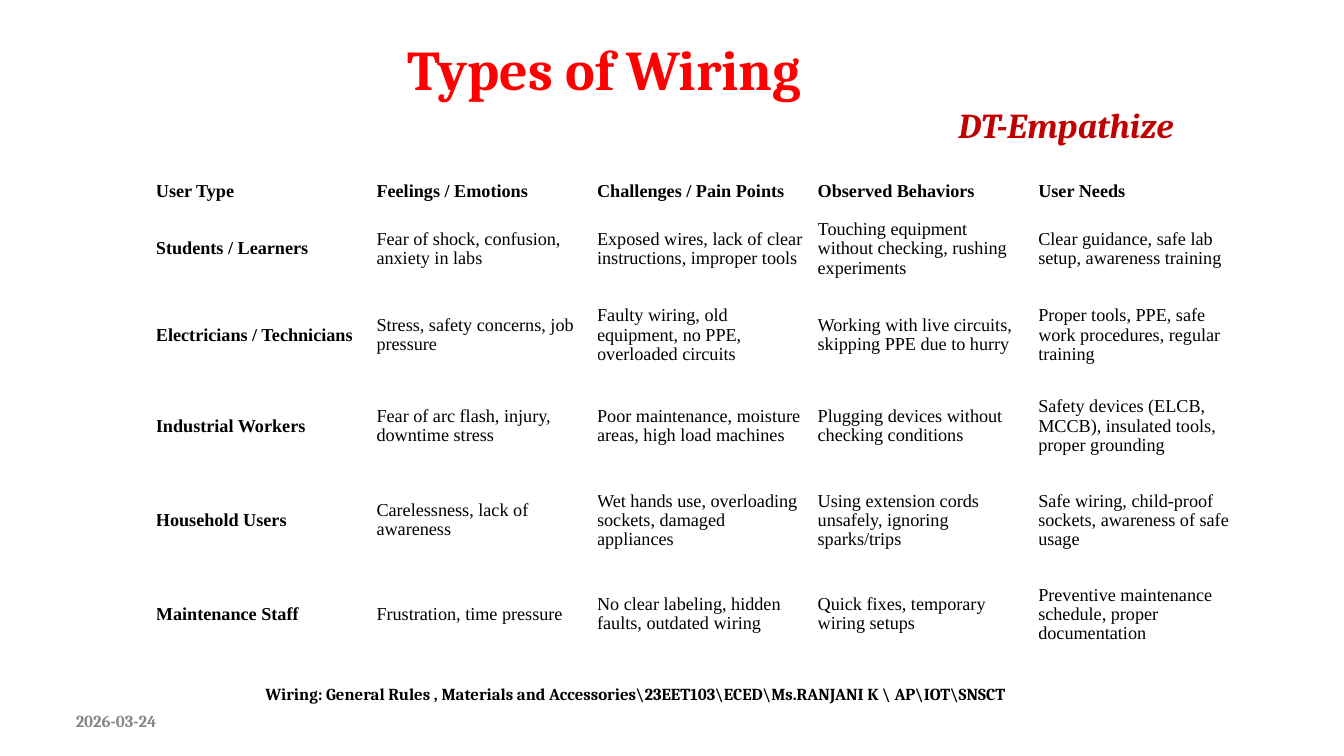
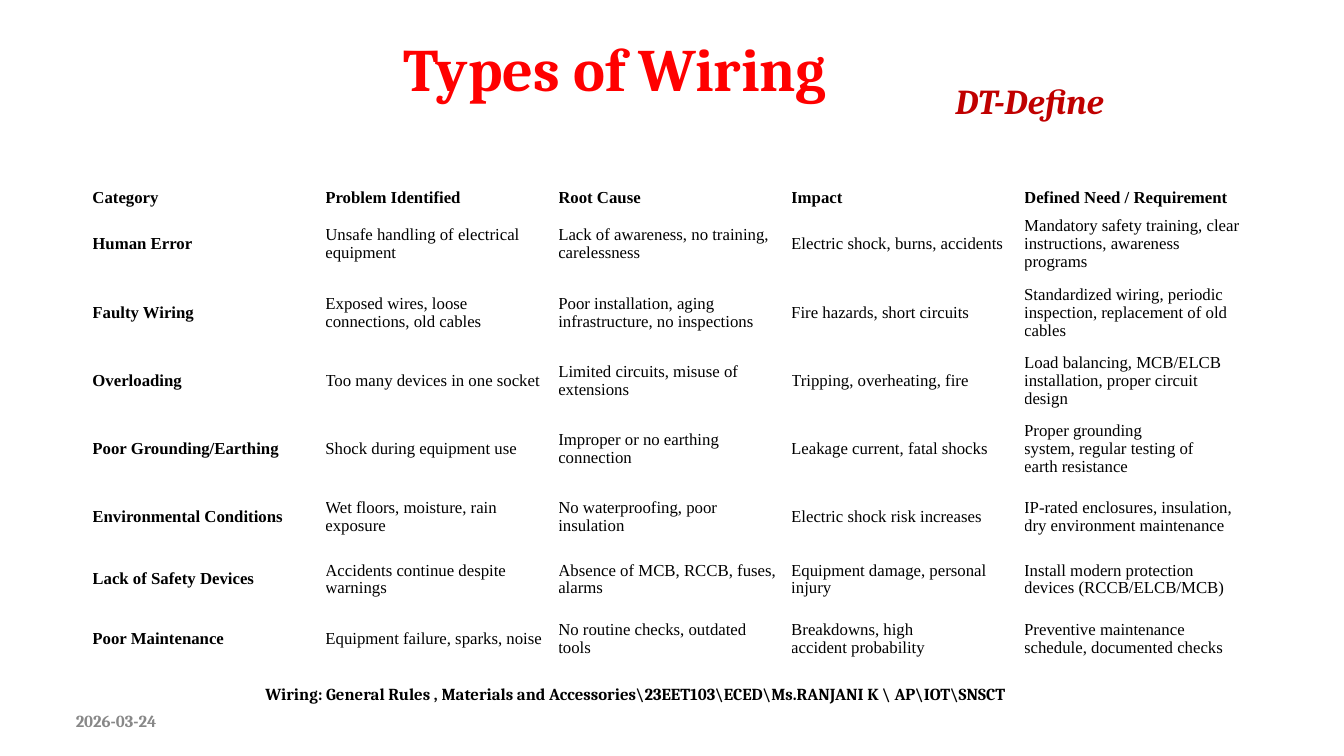
from pptx import Presentation
from pptx.dml.color import RGBColor
from pptx.enum.text import MSO_ANCHOR, MSO_AUTO_SIZE, PP_ALIGN
from pptx.util import Cm, Pt

TOP, MIDDLE = MSO_ANCHOR.TOP, MSO_ANCHOR.MIDDLE
NO_AUTOFIT = MSO_AUTO_SIZE.NONE
LEFT = PP_ALIGN.LEFT

RED = RGBColor(0xFF, 0x00, 0x00)
DARK_RED = RGBColor(0xC0, 0x00, 0x00)
BLACK = RGBColor(0x00, 0x00, 0x00)
GRAY = RGBColor(0x88, 0x88, 0x88)
HEADING_FONT = "Cambria"
TABLE_FONT = "Times New Roman"
TITLE = "Types of Wiring"
FOOTER = (
    "Wiring: General Rules , Materials and Accessories"
    "\\23EET103\\ECED\\Ms.RANJANI K \\ AP\\IOT\\SNSCT"
)
DATE = "2026-03-24"

EMPATHIZE_ROWS = [
    ["User Type", "Feelings / Emotions", "Challenges / Pain Points",
     "Observed Behaviors", "User Needs"],
    ["Students / Learners",
     "Fear of shock, confusion, anxiety in labs",
     "Exposed wires, lack of clear instructions, improper tools",
     "Touching equipment without checking, rushing experiments",
     "Clear guidance, safe lab setup, awareness training"],
    ["Electricians / Technicians",
     "Stress, safety concerns, job pressure",
     "Faulty wiring, old equipment, no PPE, overloaded circuits",
     "Working with live circuits, skipping PPE due to hurry",
     "Proper tools, PPE, safe work procedures, regular training"],
    ["Industrial Workers",
     "Fear of arc flash, injury, downtime stress",
     "Poor maintenance, moisture areas, high load machines",
     "Plugging devices without checking conditions",
     "Safety devices (ELCB, MCCB), insulated tools, proper grounding"],
    ["Household Users",
     "Carelessness, lack of awareness",
     "Wet hands use, overloading sockets, damaged appliances",
     "Using extension cords unsafely, ignoring sparks/trips",
     "Safe wiring, child-proof sockets, awareness of safe usage"],
    ["Maintenance Staff",
     "Frustration, time pressure",
     "No clear labeling, hidden faults, outdated wiring",
     "Quick fixes, temporary wiring setups",
     "Preventive maintenance schedule, proper documentation"],
]

DEFINE_ROWS = [
    ["Category", "Problem Identified", "Root Cause", "Impact",
     "Defined Need / Requirement"],
    ["Human Error",
     "Unsafe handling of electrical equipment",
     "Lack of awareness, no training, carelessness",
     "Electric shock, burns, accidents",
     "Mandatory safety training, clear instructions, awareness programs"],
    ["Faulty Wiring",
     "Exposed wires, loose connections, old cables",
     "Poor installation, aging infrastructure, no inspections",
     "Fire hazards, short circuits",
     "Standardized wiring, periodic inspection, replacement of old cables"],
    ["Overloading",
     "Too many devices in one socket",
     "Limited circuits, misuse of extensions",
     "Tripping, overheating, fire",
     "Load balancing, MCB/ELCB installation, proper circuit design"],
    ["Poor Grounding/Earthing",
     "Shock during equipment use",
     "Improper or no earthing connection",
     "Leakage current, fatal shocks",
     "Proper grounding\vsystem, regular testing of\vearth resistance"],
    ["Environmental Conditions",
     "Wet floors, moisture, rain exposure",
     "No waterproofing, poor insulation",
     "Electric shock risk increases",
     "IP-rated enclosures, insulation, dry environment maintenance"],
    ["Lack of Safety Devices",
     "Accidents continue despite warnings",
     "Absence of MCB, RCCB, fuses, alarms",
     "Equipment damage, personal injury",
     "Install modern protection devices (RCCB/ELCB/MCB)"],
    ["Poor Maintenance",
     "Equipment failure, sparks, noise",
     "No routine checks, outdated tools",
     "Breakdowns, high\vaccident probability",
     "Preventive maintenance schedule, documented checks"],
]


class WiringDeck:
    """Holds the presentation, its style and the current slide."""

    def __init__(self):
        self.presentation = Presentation()
        self.presentation.slide_width = Cm(33.87)
        self.presentation.slide_height = Cm(19.05)
        self.slide = None

    def style_font(self, paragraph, name, size, color, bold=True, italic=False):
        for run in paragraph.runs:
            font = run.font
            font.name, font.size = name, Pt(size)
            font.bold, font.italic = bold, italic
            font.color.rgb = color

    def fill_box(self, shape, text, size, color, italic=False):
        frame = shape.text_frame
        frame.text = text
        frame.word_wrap = True
        frame.auto_size = NO_AUTOFIT
        frame.vertical_anchor = TOP
        frame.margin_left = frame.margin_right = 0
        frame.margin_top = frame.margin_bottom = 0
        paragraph = frame.paragraphs[0]
        paragraph.alignment = LEFT
        self.style_font(paragraph, HEADING_FONT, size, color, italic=italic)

    def add_text(self, text, left, top, width, height, size, color, italic=False):
        shape = self.slide.shapes.add_textbox(
            Cm(left), Cm(top), Cm(width), Cm(height))
        self.fill_box(shape, text, size, color, italic)

    def add_slide(self, left, top, width, height, size):
        layout = self.presentation.slide_layouts[5]
        self.slide = self.presentation.slides.add_slide(layout)
        title = self.slide.shapes.title
        title.left, title.top = Cm(left), Cm(top)
        title.width, title.height = Cm(width), Cm(height)
        self.fill_box(title, TITLE, size, RED)
        self.add_text(FOOTER, 6.69, 17.22, 20, 0.6, 12, BLACK)
        self.add_text(DATE, 1.91, 17.91, 2.4, 0.56, 12, GRAY)

    def add_stage(self, text, left, top, width):
        self.add_text(text, left, top, width, 1.12, 25, DARK_RED, italic=True)

    def add_table(self, rows, left, top, column_width, heights, right_margins, size):
        columns = len(rows[0])
        table = self.slide.shapes.add_table(
            len(rows), columns, Cm(left), Cm(top),
            Cm(column_width * columns), Cm(sum(heights))).table
        table.first_row = table.horz_banding = False
        for column in table.columns:
            column.width = Cm(column_width)
        for row, height in zip(table.rows, heights):
            row.height = Cm(height)
        for row_index, texts in enumerate(rows):
            for column_index, text in enumerate(texts):
                cell = table.cell(row_index, column_index)
                cell.text = text
                cell.fill.background()
                cell.vertical_anchor = MIDDLE
                cell.margin_left = cell.margin_top = cell.margin_bottom = 0
                cell.margin_right = Cm(right_margins[column_index])
                paragraph = cell.text_frame.paragraphs[0]
                paragraph.line_spacing = 0.96
                bold = row_index == 0 or column_index == 0
                self.style_font(paragraph, TABLE_FONT, size, BLACK, bold)


def main():
    deck = WiringDeck()

    deck.add_slide(10.26, 0.88, 10.31, 1.78, 40)
    deck.add_stage("DT-Empathize", 24.15, 2.6, 6)
    deck.add_table(EMPATHIZE_ROWS, 3.93, 4.46, 5.56,
                   [0.76, 2.12, 2.22] + [2.37] * 3,
                   [0.48, 0.48, 0.33, 0.48, 0.48], 13)

    deck.add_slide(10.16, 0.8, 12.95, 1.88, 43)
    deck.add_stage("DT-Define", 24.08, 2, 5)
    deck.add_table(DEFINE_ROWS, 2.33, 4.67, 5.87,
                   [0.63] + [1.72] * 5 + [1.41, 1.61],
                   [0.33, 0.33, 0.3, 0.33, 0.38], 12)

    deck.presentation.save("out.pptx")


if __name__ == "__main__":
    main()
